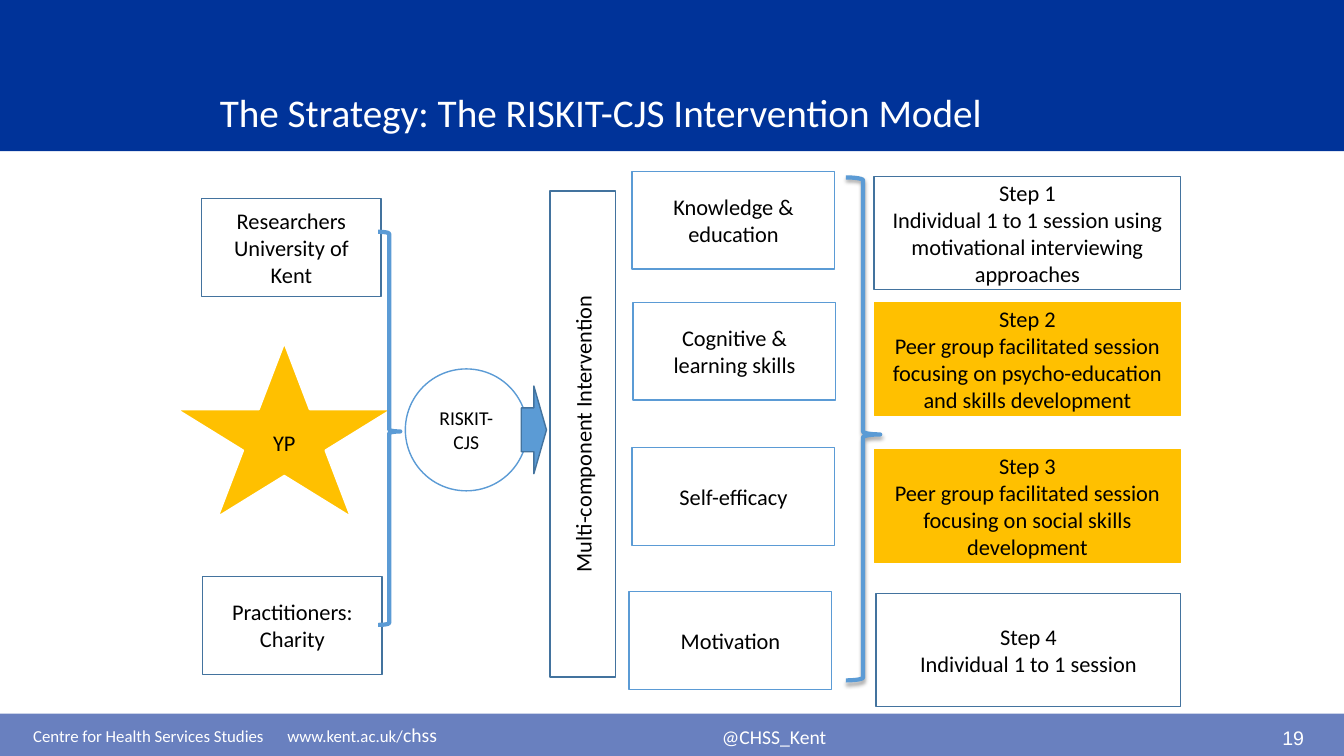
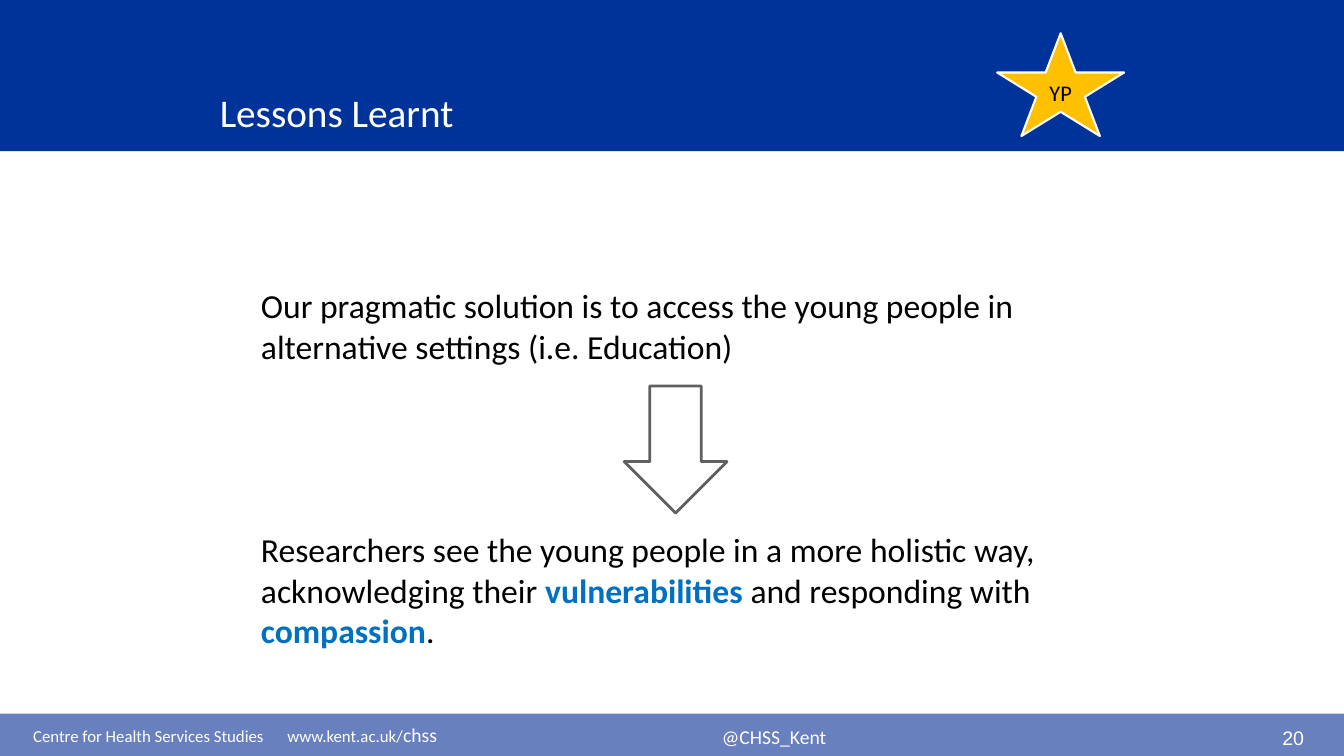
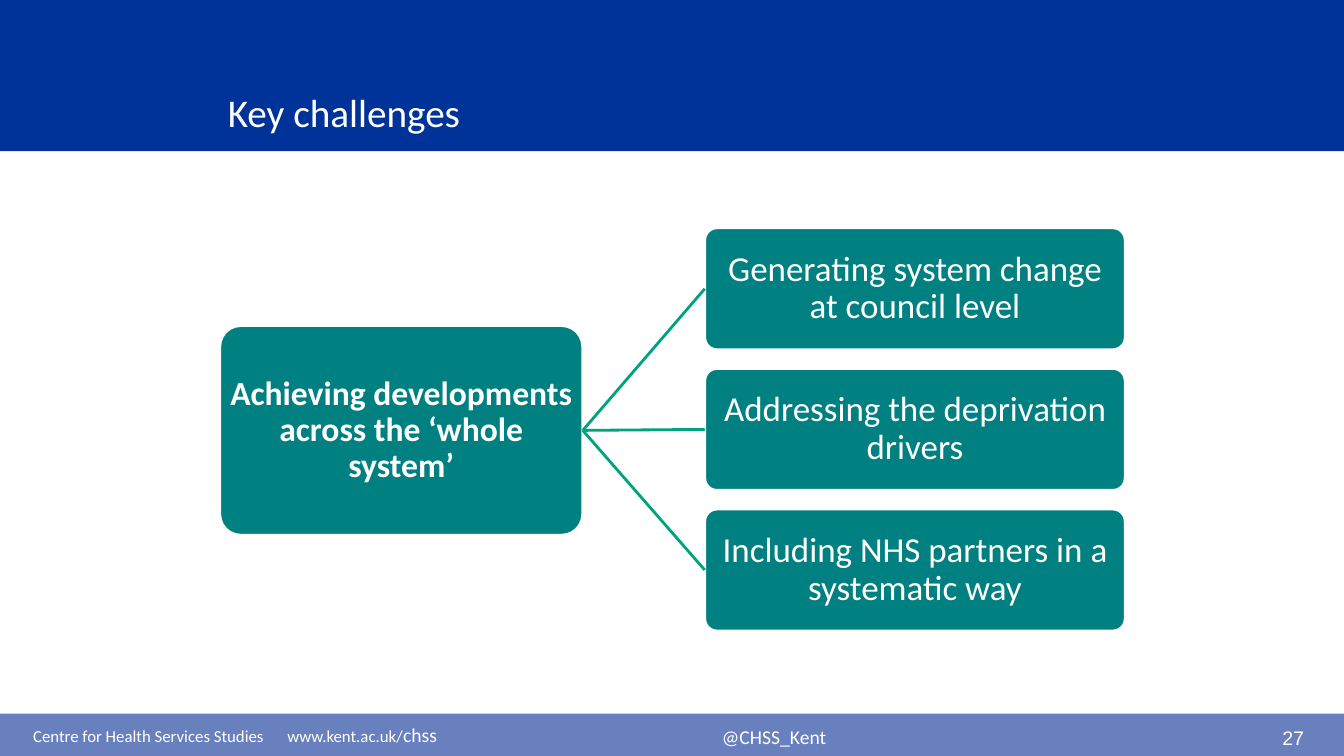
import pptx
import pptx.dml.color
import pptx.enum.shapes
import pptx.enum.text
import pptx.util
from lxml import etree

Inches = pptx.util.Inches
Pt = pptx.util.Pt
RGBColor = pptx.dml.color.RGBColor
Shape = pptx.enum.shapes.MSO_SHAPE
Align = pptx.enum.text.PP_ALIGN
Anchor = pptx.enum.text.MSO_ANCHOR
DRAWING = "{http://schemas.openxmlformats.org/drawingml/2006/main}"

WHITE = RGBColor(0xFF, 0xFF, 0xFF)
BLACK = RGBColor(0x00, 0x00, 0x00)
NAVY = RGBColor(0x00, 0x33, 0x99)
FOOTER_BLUE = RGBColor(0x69, 0x80, 0xBF)
SKY = RGBColor(0x5B, 0x9B, 0xD5)
STEEL = RGBColor(0x43, 0x73, 0x9E)
GOLD = RGBColor(0xFF, 0xC0, 0x00)
ACCENT = RGBColor(0x00, 0x70, 0xC0)
GREY = RGBColor(0x60, 0x60, 0x60)
TEAL = RGBColor(0x00, 0x80, 0x80)
GREEN = RGBColor(0x00, 0xA3, 0x7B)


def draw(page, kind, place, fill=None, line=None, width=1):
    box = page.shapes.add_shape(kind, *map(Inches, place))
    box.shadow.inherit = False
    if fill is None:
        box.fill.background()
    else:
        box.fill.solid()
        box.fill.fore_color.rgb = fill
    if line is None:
        box.line.fill.background()
    else:
        box.line.color.rgb = line
        box.line.width = Pt(width)
    return box


def write(box, text, size=16, color=BLACK, align=Align.CENTER, anchor=Anchor.MIDDLE,
          margin=None, face="Calibri", tab=None):
    frame = box.text_frame
    frame.word_wrap = True
    frame.vertical_anchor = anchor
    if margin is not None:
        frame.margin_left = frame.margin_right = Inches(margin)
        frame.margin_top = frame.margin_bottom = Inches(margin)
    frame.text = text
    for para in frame.paragraphs:
        para.alignment = align
        if tab is not None:
            stops = etree.SubElement(para._p.get_or_add_pPr(), DRAWING + "tabLst")
            etree.SubElement(stops, DRAWING + "tab", pos=str(Inches(tab)), algn="l")
        para.font.size = Pt(size)
        para.font.name = face
        para.font.color.rgb = color
    return frame.paragraphs[0]


deck = pptx.Presentation()
deck.slide_width = Inches(13.33)
deck.slide_height = Inches(7.5)

pages = []
for title, title_left, number in [
    ("The Strategy: The RISKIT-CJS Intervention Model", 2.18, "19"),
    ("Lessons Learnt", 2.18, "20"),
    ("Key challenges", 2.26, "27"),
]:
    page = deck.slides.add_slide(deck.slide_layouts[6])
    pages.append(page)
    draw(page, Shape.RECTANGLE, (0, 7.08, 13.33, 0.42), FOOTER_BLUE)
    draw(page, Shape.RECTANGLE, (0, 0, 13.33, 1.5), NAVY)
    centre_name = page.shapes.add_textbox(Inches(0.33), Inches(7.17), Inches(6.5), Inches(0.24))
    para = write(centre_name, "Centre for Health Services Studies\twww.kent.ac.uk/", 12, WHITE,
                 Align.LEFT, Anchor.TOP, 0, tab=2.52)
    span = para.add_run()
    span.text = "chss"
    span.font.size = Pt(14)
    handle = page.shapes.add_textbox(Inches(7.16), Inches(7.19), Inches(2.67), Inches(0.3))
    write(handle, "@CHSS_Kent", 14, WHITE, Align.LEFT, Anchor.TOP, 0)
    page_number = page.shapes.add_textbox(Inches(12.62), Inches(7.15), Inches(0.7), Inches(0.34))
    write(page_number, number, 14, WHITE, Align.LEFT, Anchor.TOP, face="Arial")
    heading = page.shapes.add_textbox(Inches(title_left), Inches(0.17), Inches(9.24), Inches(1.17))
    write(heading, title, 28, WHITE, Align.LEFT, Anchor.BOTTOM, 0)

strategy, lessons, challenges = pages

for left, top, text in [
    (2, 1.97, "Researchers\nUniversity of Kent"),
    (2.01, 5.72, "Practitioners:\nCharity"),
]:
    write(draw(strategy, Shape.RECTANGLE, (left, top, 1.78, 0.97), None, STEEL), text)

for page, place in [(strategy, (1.75, 3.4, 2.14, 1.73)), (lessons, (9.89, 0.33, 1.26, 1.02))]:
    write(draw(page, Shape.STAR_5_POINT, place, GOLD, WHITE, 1.5), "YP")

write(draw(strategy, Shape.OVAL, (4.02, 3.66, 1.21, 1.21), WHITE, SKY), "RISKIT-CJS", 14)

for place, middle in [((3.75, 2.3, 0.22, 3.9), 0.508), ((8.39, 1.76, 0.34, 4.99), 0.511)]:
    brace = draw(strategy, Shape.RIGHT_BRACE, place, None, SKY, 3)
    brace.adjustments[0] = 0.083
    brace.adjustments[1] = middle
effects = brace._element.spPr.find(DRAWING + "effectLst")
shadow = etree.SubElement(effects, DRAWING + "outerShdw", blurRad=str(Pt(3.1)),
                          dist=str(Pt(1.8)), dir="5400000", rotWithShape="0")
shade = etree.SubElement(shadow, DRAWING + "srgbClr", val="000000")
etree.SubElement(shade, DRAWING + "alpha", val="35000")

intervention = draw(strategy, Shape.RECTANGLE, (3.37, 3.98, 4.82, 0.65), None, STEEL)
intervention.rotation = 270
write(intervention, "Multi-component Intervention")

for left, top, text in [
    (6.27, 1.7, "Knowledge & education"),
    (6.28, 3, "Cognitive & learning skills"),
    (6.27, 4.44, "Self-efficacy"),
    (6.24, 5.87, "Motivation"),
]:
    write(draw(strategy, Shape.RECTANGLE, (left, top, 2.01, 0.97), WHITE, SKY), text)

for left, top, width, fill, line, weight, text in [
    (8.67, 1.75, 3.04, None, STEEL, 1,
     "Step 1\nIndividual 1 to 1 session using motivational interviewing approaches"),
    (8.67, 3, 3.04, GOLD, GOLD, 0.5,
     "Step 2\nPeer group facilitated session focusing on psycho-education and skills development"),
    (8.67, 4.46, 3.04, GOLD, GOLD, 0.5,
     "Step 3\nPeer group facilitated session focusing on social skills development"),
    (8.69, 5.89, 3.02, None, STEEL, 1, "Step 4\nIndividual 1 to 1 session"),
]:
    write(draw(strategy, Shape.RECTANGLE, (left, top, width, 1.12), fill, line, weight), text)

draw(strategy, Shape.RIGHT_ARROW, (5.17, 3.83, 0.25, 0.87), SKY, STEEL)

solution = lessons.shapes.add_textbox(Inches(2.49), Inches(2.78), Inches(8.74), Inches(0.91))
write(solution, "Our pragmatic solution is to access the young people in alternative settings "
      "(i.e. Education)", 24, BLACK, Align.LEFT, Anchor.TOP)
response = lessons.shapes.add_textbox(Inches(2.49), Inches(5.2), Inches(8.74), Inches(1.31))
para = write(response, "Researchers see the young people in a more holistic way, "
             "acknowledging their ", 24, BLACK, Align.LEFT, Anchor.TOP)
for text, strong in [("vulnerabilities ", True), ("and responding with ", False),
                     ("compassion", True), (".", False)]:
    span = para.add_run()
    span.text = text
    if strong:
        span.font.bold = True
        span.font.color.rgb = ACCENT
draw(lessons, Shape.DOWN_ARROW, (6.19, 3.83, 1.02, 1.26), WHITE, GREY, 2)

goal = draw(challenges, Shape.ROUNDED_RECTANGLE, (2.18, 3.23, 3.6, 2.08), TEAL, WHITE, 2)
goal.adjustments[0] = 0.1
para = write(goal, "Achieving developments across the ‘whole system’", 24, WHITE, margin=0.02)
para.font.bold = True
para.line_spacing = 0.9

for row, text in enumerate([
    "Generating system change at council level",
    "Addressing the deprivation drivers",
    "Including NHS partners in a systematic way",
]):
    challenge = draw(challenges, Shape.ROUNDED_RECTANGLE, (6.99, 2.26 + 1.395 * row, 4.17, 1.21),
                     TEAL, WHITE, 2)
    challenge.adjustments[0] = 0.1
    write(challenge, text, 25, WHITE, margin=0.02).line_spacing = 0.9
    link = challenges.shapes.add_connector(pptx.enum.shapes.MSO_CONNECTOR.STRAIGHT, 0, 0, 0, 0)
    link.begin_connect(goal, 3)
    link.end_connect(challenge, 1)
    link.line.color.rgb = GREEN
    link.line.width = Pt(2)
    etree.SubElement(link._element.spPr, DRAWING + "effectLst")

deck.save("out.pptx")
